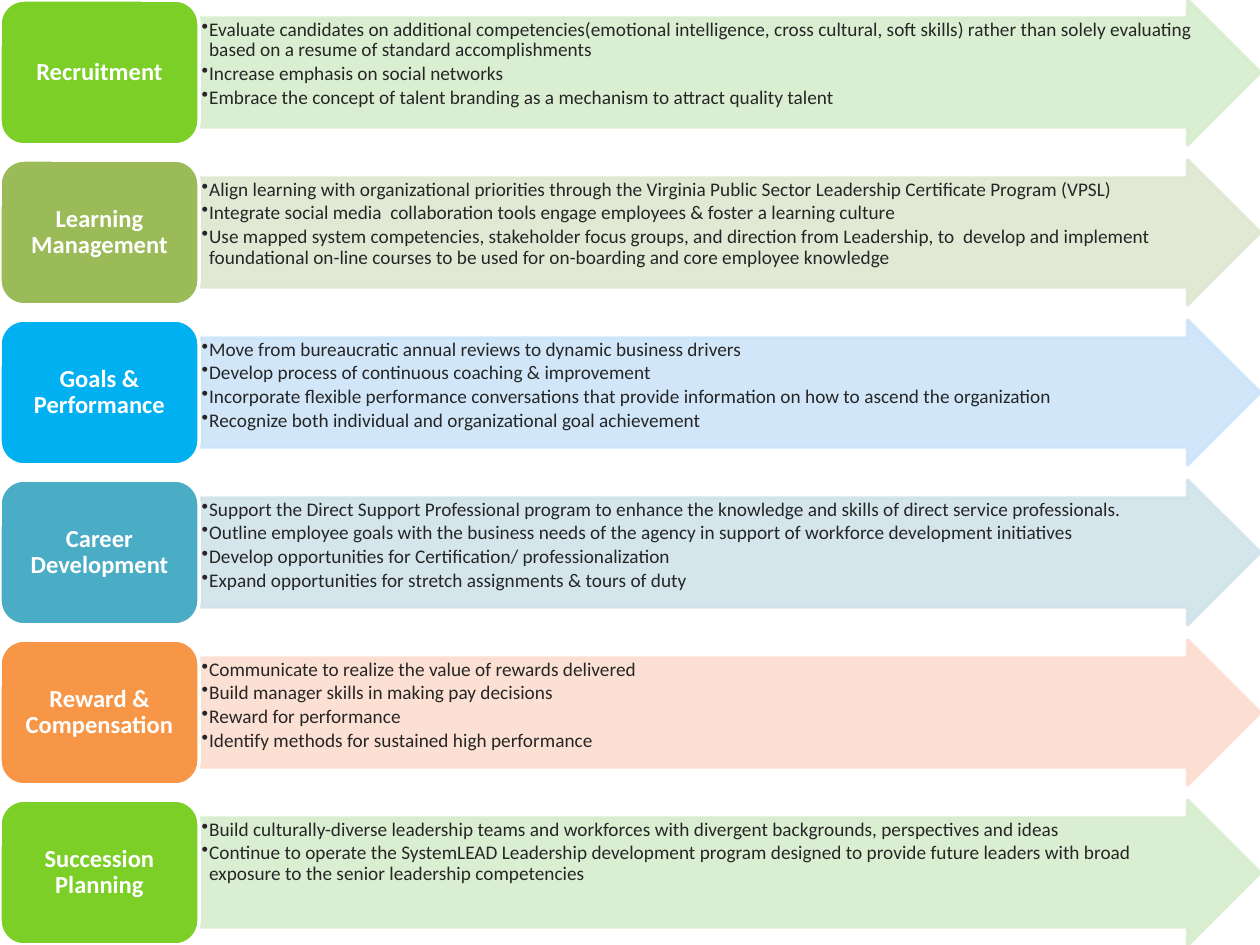
import pptx
import pptx.dml.color
import pptx.enum.shapes
import pptx.enum.text
import pptx.oxml
import pptx.oxml.ns
import pptx.util
from pptx.util import Inches

SHAPES = pptx.enum.shapes.MSO_SHAPE
ROW_HEIGHT = 1.15
ROW_PITCH = 1.27
LABEL_WIDTH = 1.58
ARROW_LEFT = 1.59
ARROW_WIDTH = 8.41

LABEL_FORMAT = {"size": pptx.util.Pt(14), "name": "Calibri", "bold": True}
BULLET_FORMAT = {"size": pptx.util.Pt(11), "name": "Calibri"}

# Label, label colour, arrow colour, bullets
ROWS = [
    ("Recruitment", "7BCF27", "D7EDCD", [
        "Evaluate candidates on additional competencies(emotional intelligence, cross cultural, "
        "soft skills) rather than solely evaluating based on a resume of standard accomplishments",
        "Increase emphasis on social networks",
        "Embrace the concept of talent branding as a mechanism to attract quality talent",
    ]),
    ("Learning Management", "9BBB59", "DEE7D1", [
        "Align learning with organizational priorities through the Virginia Public Sector "
        "Leadership Certificate Program (VPSL)",
        "Integrate social media  collaboration tools engage employees & foster a learning culture",
        "Use mapped system competencies, stakeholder focus groups, and direction from Leadership, "
        "to  develop and implement foundational on-line courses to be used for on-boarding and "
        "core employee knowledge",
    ]),
    ("Goals & Performance", "00B0F0", "CCE4F9", [
        "Move from bureaucratic annual reviews to dynamic business drivers",
        "Develop process of continuous coaching & improvement",
        "Incorporate flexible performance conversations that provide information on how to "
        "ascend the organization",
        "Recognize both individual and organizational goal achievement",
    ]),
    ("Career Development", "4BACC6", "D0E3EA", [
        "Support the Direct Support Professional program to enhance the knowledge and skills of "
        "direct service professionals.",
        "Outline employee goals with the business needs of the agency in support of workforce "
        "development initiatives",
        "Develop opportunities for Certification/ professionalization",
        "Expand opportunities for stretch assignments & tours of duty",
    ]),
    ("Reward & Compensation", "F79646", "FCDDCF", [
        "Communicate to realize the value of rewards delivered",
        "Build manager skills in making pay decisions",
        "Reward for performance",
        "Identify methods for sustained high performance",
    ]),
    ("Succession Planning", "7BCF27", "D7EDCD", [
        "Build culturally-diverse leadership teams and workforces with divergent backgrounds, "
        "perspectives and ideas",
        "Continue to operate the SystemLEAD Leadership development program designed to provide "
        "future leaders with broad exposure to the senior leadership competencies",
    ]),
]


def color(value):
    return pptx.dml.color.RGBColor.from_string(value)


def set_attributes(target, values):
    for name, value in values.items():
        setattr(target, name, value)


def add_block(slide, kind, box, fill, line):
    shape = slide.shapes.add_shape(kind, *map(Inches, box))
    shape.shadow.inherit = False
    shape.fill.solid()
    shape.fill.fore_color.rgb = color(fill)
    shape.line.color.rgb = color(line)
    shape.line.width = pptx.util.Pt(2)
    return shape


def add_text_box(slide, box, margins, anchor):
    frame = slide.shapes.add_textbox(*map(Inches, box)).text_frame
    horizontal, vertical = map(Inches, margins)
    set_attributes(frame, {
        "word_wrap": True, "vertical_anchor": anchor,
        "margin_left": horizontal, "margin_right": horizontal,
        "margin_top": vertical, "margin_bottom": vertical,
    })
    return frame


def add_run(paragraph, text, values, text_color):
    run = paragraph.add_run()
    run.text = text
    set_attributes(run.font, values)
    run.font.color.rgb = color(text_color)
    paragraph.line_spacing = 0.9


def add_bullet(paragraph):
    paragraph.level = 1
    properties = paragraph._p.get_or_add_pPr()
    properties.set("marL", str(Inches(0.06)))
    properties.set("indent", str(Inches(-0.06)))
    properties.append(pptx.oxml.parse_xml(
        f'<a:buChar {pptx.oxml.ns.nsdecls("a")} char="•"/>'))


def add_arrow(slide, left, top, width, height, fill, bullets):
    arrow = add_block(slide, SHAPES.RIGHT_ARROW, (left, top, width, height), fill, fill)
    arrow.adjustments[0] = 0.75
    arrow.adjustments[1] = 0.5
    # Fill and line are slightly transparent
    for element in arrow._element.spPr.iter(pptx.oxml.ns.qn("a:srgbClr")):
        element.append(pptx.oxml.parse_xml(
            f'<a:alpha {pptx.oxml.ns.nsdecls("a")} val="90000"/>'))
    # The text covers the arrow's shaft
    frame = add_text_box(slide, (left, top + height / 8, width - 0.43, height * 0.75),
                         (0.01, 0.01), pptx.enum.text.MSO_ANCHOR.TOP)
    for index, bullet in enumerate(bullets):
        paragraph = frame.add_paragraph() if index else frame.paragraphs[0]
        add_bullet(paragraph)
        add_run(paragraph, bullet, BULLET_FORMAT, "262626")
        paragraph.space_after = pptx.util.Pt(1.65)


def add_label(slide, left, top, width, height, fill, text):
    add_block(slide, SHAPES.ROUNDED_RECTANGLE, (left, top, width, height), fill, "FFFFFF")
    inset = 0.06
    frame = add_text_box(
        slide, (left + inset, top + inset, width - 2 * inset, height - 2 * inset),
        (0.06, 0.03), pptx.enum.text.MSO_ANCHOR.MIDDLE)
    paragraph = frame.paragraphs[0]
    paragraph.alignment = pptx.enum.text.PP_ALIGN.CENTER
    add_run(paragraph, text, LABEL_FORMAT, "FFFFFF")


def main():
    presentation = pptx.Presentation()
    presentation.slide_width = Inches(10)
    presentation.slide_height = Inches(7.5)
    slide = presentation.slides.add_slide(presentation.slide_layouts[6])

    # One arrow and label per talent area
    for index, (label, label_color, arrow_color, bullets) in enumerate(ROWS):
        top = index * ROW_PITCH
        add_arrow(slide, ARROW_LEFT, top, ARROW_WIDTH, ROW_HEIGHT, arrow_color, bullets)
        add_label(slide, 0, top, LABEL_WIDTH, ROW_HEIGHT, label_color, label)

    presentation.save("out.pptx")


if __name__ == "__main__":
    main()
